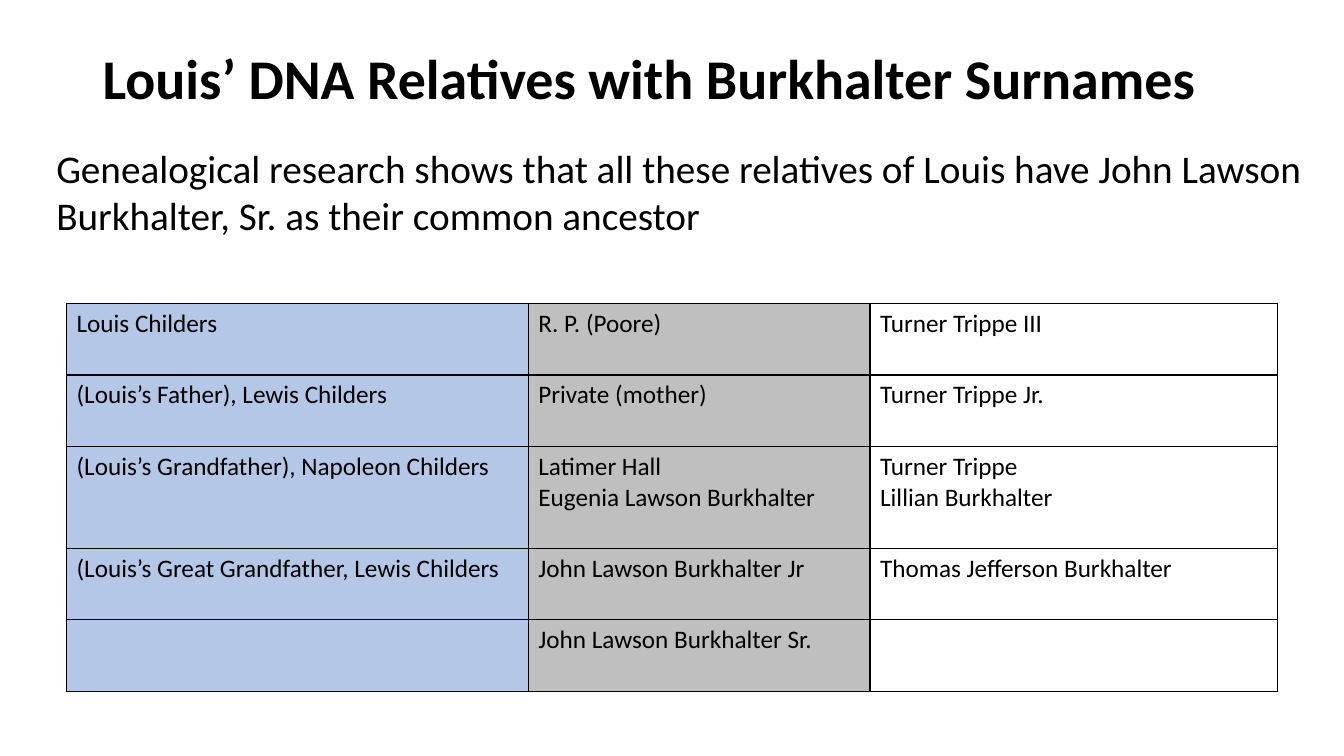
from lxml import etree
from pptx import Presentation
from pptx.dml.color import RGBColor
from pptx.enum import text
from pptx.oxml import ns
from pptx.util import Inches, Pt

# Content
HEADING = "Louis’ DNA Relatives with Burkhalter Surnames"
FINDING = ("Genealogical research shows that all these relatives of Louis have "
           "John Lawson Burkhalter, Sr. as their common ancestor")
LINEAGES = [
    ("Louis Childers", "R. P. (Poore)", "Turner Trippe III"),
    ("(Louis’s Father), Lewis Childers", "Private (mother)", "Turner Trippe Jr."),
    ("(Louis’s Grandfather), Napoleon Childers",
     "Latimer Hall\nEugenia Lawson Burkhalter",
     "Turner Trippe\nLillian Burkhalter"),
    ("(Louis’s Great Grandfather, Lewis Childers",
     "John Lawson Burkhalter Jr", "Thomas Jefferson Burkhalter"),
    ("", "John Lawson Burkhalter Sr.", ""),
]
COLORS = {"ink": "000000", "louis": "B4C7E7", "poore": "BFBFBF"}
BRANCH_FILLS = (COLORS["louis"], COLORS["poore"], None)
BRANCH_WIDTHS = (4.58, 3.39, 4.04)
ONE_NAME_HEIGHT, EXTRA_NAME_HEIGHT = 0.71, 0.3
FONT = "Calibri"


def style(frame, size, bold=False):
    for paragraph in frame.paragraphs:
        paragraph.alignment = text.PP_ALIGN.LEFT
        for item in (paragraph, *paragraph.runs):
            item.font.name, item.font.size, item.font.bold = FONT, Pt(size), bold
            item.font.color.rgb = RGBColor.from_string(COLORS["ink"])


def add_text(box, words, size, bold=False):
    frame = slide.shapes.add_textbox(*map(Inches, box)).text_frame
    frame.word_wrap = True
    frame.text = words
    style(frame, size, bold)
    return frame


def outline(cell):
    properties = cell._tc.get_or_add_tcPr()
    for side in ("a:lnL", "a:lnR", "a:lnT", "a:lnB"):
        line = etree.SubElement(properties, ns.qn(side), w=str(Pt(1)))
        ink = etree.SubElement(line, ns.qn("a:solidFill"))
        etree.SubElement(ink, ns.qn("a:srgbClr"), val=COLORS["ink"])


prs = Presentation()
prs.slide_width, prs.slide_height = Inches(13.33), Inches(7.5)
slide = prs.slides.add_slide(prs.slide_layouts[6])

# Heading and finding
heading = add_text((0.92, 0.08, 11.5, 1.45), HEADING, 40, bold=True)
heading.vertical_anchor = text.MSO_ANCHOR.MIDDLE
heading.paragraphs[0].line_spacing = 0.9
add_text((0.46, 1.38, 12.75, 1.04), FINDING, 28)

# Lineage table: one column per branch, one row per generation
heights = [ONE_NAME_HEIGHT + EXTRA_NAME_HEIGHT * max(name.count("\n") for name in row)
           for row in LINEAGES]
lineage = slide.shapes.add_table(
    len(LINEAGES), len(BRANCH_WIDTHS), Inches(0.66), Inches(3.01),
    Inches(sum(BRANCH_WIDTHS)), Inches(sum(heights))).table
lineage.first_row = lineage.horz_banding = False
for column, width in zip(lineage.columns, BRANCH_WIDTHS):
    column.width = Inches(width)
for row, height, names in zip(lineage.rows, heights, LINEAGES):
    row.height = Inches(height)
    for cell, name, fill in zip(row.cells, names, BRANCH_FILLS):
        cell.text_frame.text = name
        style(cell.text_frame, 18)
        outline(cell)
        if fill:
            cell.fill.solid()
            cell.fill.fore_color.rgb = RGBColor.from_string(fill)
        else:
            cell.fill.background()

prs.save("out.pptx")
